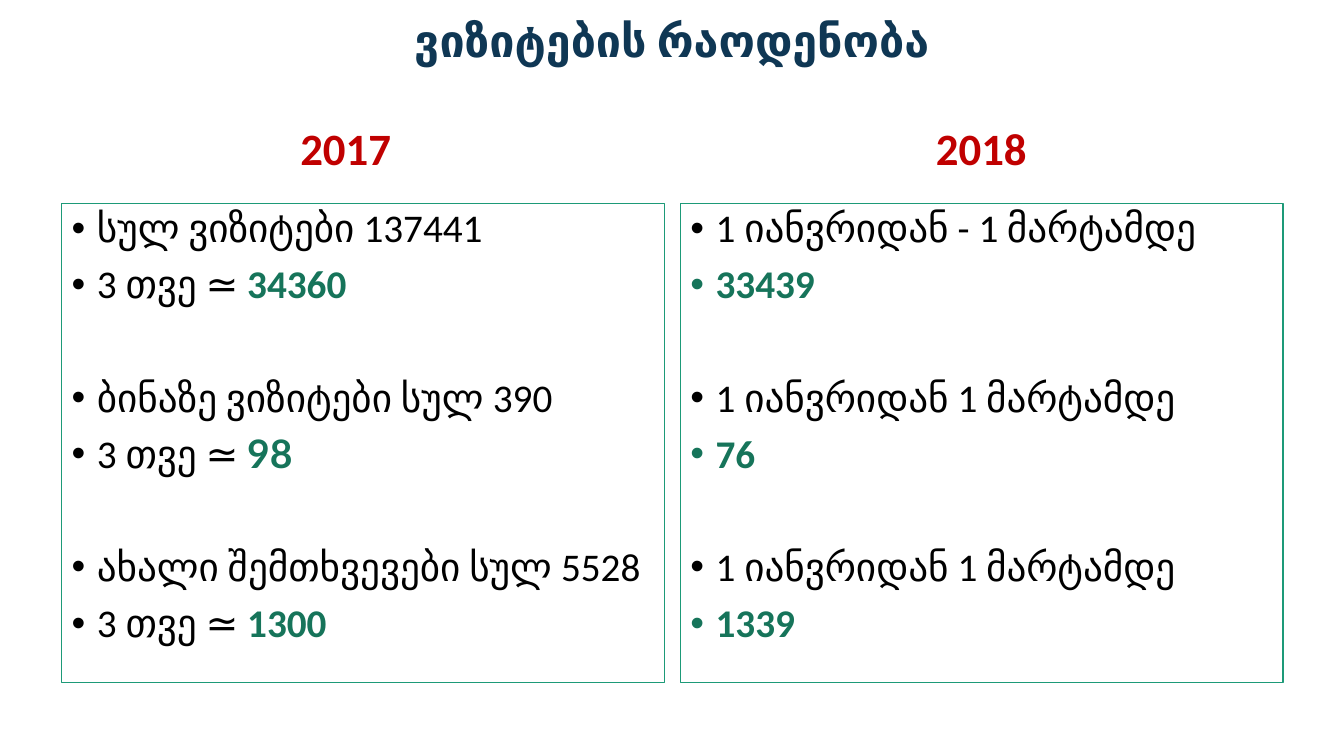
from pptx import Presentation
from pptx.dml.color import RGBColor
from pptx.enum.text import MSO_ANCHOR, MSO_AUTO_SIZE, PP_ALIGN
from pptx.util import Pt

COLORS = {
    "title": "0F3754",
    "year": "C00000",
    "text": "000000",
    "count": "16745A",
    "border": "1D9A78",
    "panel": "FFFFFF",
}
GROUP_GAP = 50.5

# Each group: the total line, the lead-in to the count, the count, its font
VISITS_2017 = [
    ("სულ ვიზიტები 137441", "3 თვე ≃ ", "34360", "Calibri"),
    ("ბინაზე ვიზიტები სულ 390", "3 თვე ≃ ", "98", "Lato"),
    ("ახალი შემთხვევები სულ 5528", "3 თვე ≃ ", "1300", "Calibri"),
]
VISITS_2018 = [
    ("1 იანვრიდან - 1 მარტამდე", "", "33439", "Calibri"),
    ("1 იანვრიდან 1 მარტამდე", "", "76", "Calibri"),
    ("1 იანვრიდან 1 მარტამდე", "", "1339", "Calibri"),
]


def rgb(name):
    return RGBColor.from_string(COLORS[name])


def place(sp, left, top, width, height, anchor):
    sp.left, sp.top, sp.width, sp.height = Pt(left), Pt(top), Pt(width), Pt(height)
    tf = sp.text_frame
    tf.word_wrap = True
    tf.auto_size = MSO_AUTO_SIZE.NONE
    tf.vertical_anchor = anchor
    return tf


def add_run(p, text, size=28, color="text", bold=False, font="Calibri"):
    r = p.add_run()
    r.text = text
    r.font.size = Pt(size)
    r.font.name = font
    r.font.bold = bold
    r.font.color.rgb = rgb(color)


def format_paragraph(p, align=PP_ALIGN.LEFT, before=10):
    p.alignment = align
    p.line_spacing = 0.9
    p.space_before = Pt(before)


def add_heading(sp, text, color, box, anchor):
    p = place(sp, *box, anchor).paragraphs[0]
    format_paragraph(p, PP_ALIGN.CENTER, before=0)
    add_run(p, text, size=32, color=color, bold=True)


def add_bullet(tf, first=False, before=10):
    p = tf.paragraphs[0] if first else tf.add_paragraph()
    format_paragraph(p, before=before)
    pPr = p._p.get_or_add_pPr()
    pPr.set("marL", str(Pt(18)))
    pPr.set("indent", str(-Pt(18)))
    return p


def add_panel(sp, left, groups):
    """Fill a bordered list placeholder with one pair of bullets per group."""
    tf = place(sp, left, 145.5, 430.5, 342, MSO_ANCHOR.TOP)
    sp.fill.solid()
    sp.fill.fore_color.rgb = rgb("panel")
    sp.line.color.rgb = rgb("border")
    sp.line.width = Pt(1)
    for i, (total, lead, count, font) in enumerate(groups):
        p = add_bullet(tf, first=i == 0, before=GROUP_GAP if i else 10)
        add_run(p, total)
        p = add_bullet(tf)
        if lead:
            add_run(p, lead)
        add_run(p, count, color="count", bold=True, font=font)


def main():
    prs = Presentation()
    prs.slide_width, prs.slide_height = Pt(960), Pt(540)
    s = prs.slides.add_slide(prs.slide_layouts.get_by_name("Comparison"))
    title, year_2017, list_2017, year_2018, list_2018 = s.placeholders

    add_heading(title, "ვიზიტების რაოდენობა", "title",
                (66, 0, 828, 62), MSO_ANCHOR.MIDDLE)
    add_heading(year_2017, "2017", "year", (44, 84, 406, 45), MSO_ANCHOR.BOTTOM)
    add_heading(year_2018, "2018", "year", (497, 84, 408, 45), MSO_ANCHOR.BOTTOM)
    add_panel(list_2017, 44, VISITS_2017)
    add_panel(list_2018, 486, VISITS_2018)
    prs.save("out.pptx")


if __name__ == "__main__":
    main()
